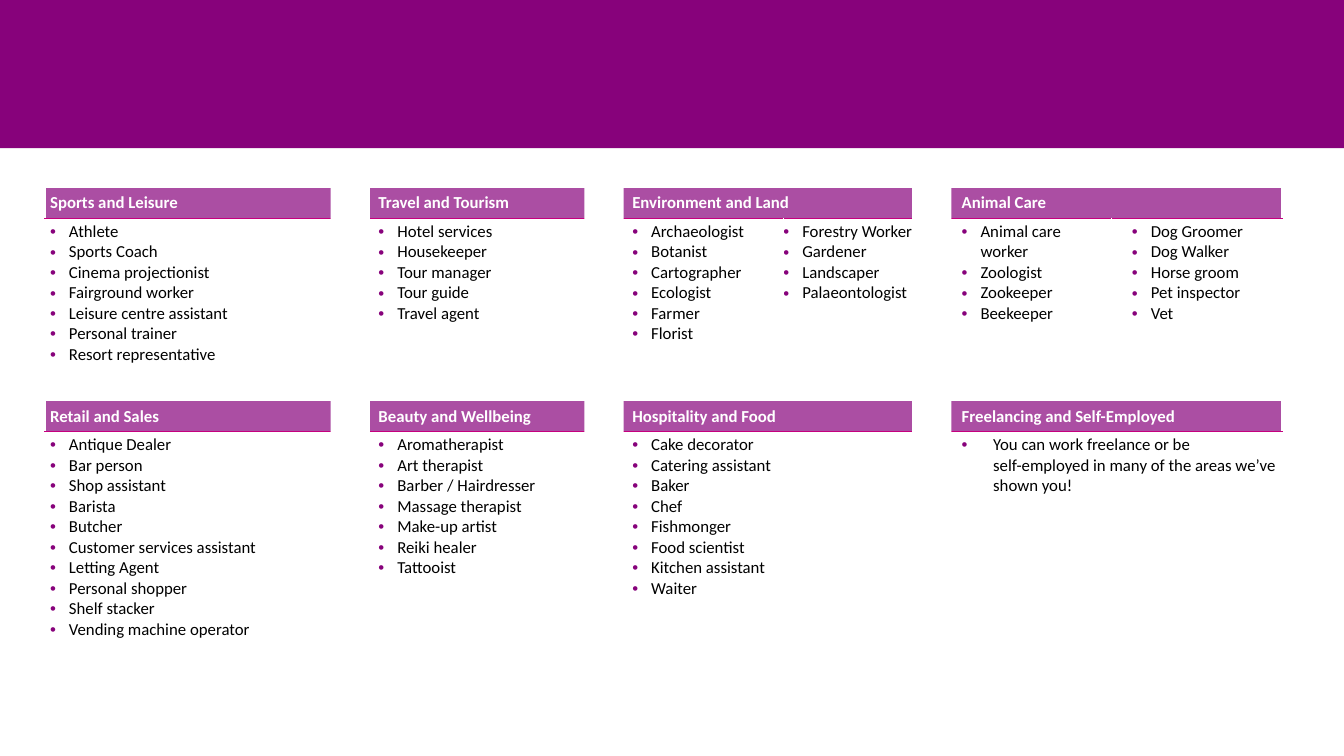
from lxml import etree
from pptx import Presentation
from pptx.dml.color import RGBColor
from pptx.enum.shapes import MSO_SHAPE
from pptx.oxml.ns import qn
from pptx.util import Pt

RECTANGLE = MSO_SHAPE.RECTANGLE

PURPLE = RGBColor(0x87, 0x02, 0x7B)
LILAC = RGBColor(0xAB, 0x4E, 0xA3)
PINK = RGBColor(0xC6, 0x00, 0x7E)
WHITE = RGBColor(0xFF, 0xFF, 0xFF)
BLACK = RGBColor(0x00, 0x00, 0x00)

SLIDE_WIDTH, SLIDE_HEIGHT = 960.48, 540
TABLE_LEFT, TABLE_TOP = 32.2, 134.2
COLUMN_WIDTHS = [238.3, 181.4, 108, 113, 121.7, 121.7]
COLUMN_INSETS = [3.6, 0, 0, 0, 14.4, 14.4]
OPEN_EDGES = (1, 2)  # columns without a white line on their left
ROW_HEIGHTS = [21.9, 130.4, 21.9, 149]
GAP_LEFTS = [236.2, 417.6, 651.9]
GAP_TOP, GAP_WIDTH, GAP_HEIGHT = 133, 28.1, 335.7
JOB_INDENT, ADVICE_INDENT = 13.5, 22.5

# Each sector: row, first column, heading, one list of jobs per column
SECTORS = [
    (0, 0, "Sports and Leisure", [
        ["Athlete", "Sports Coach", "Cinema projectionist", "Fairground worker",
         "Leisure centre assistant", "Personal trainer", "Resort representative"]]),
    (0, 1, "Travel and Tourism", [
        ["Hotel services", "Housekeeper", "Tour manager", "Tour guide", "Travel agent"]]),
    (0, 2, "Environment and Land", [
        ["Archaeologist", "Botanist", "Cartographer", "Ecologist", "Farmer", "Florist"],
        ["Forestry Worker", "Gardener", "Landscaper", "Palaeontologist"]]),
    (0, 4, "Animal Care", [
        ["Animal care worker", "Zoologist", "Zookeeper", "Beekeeper"],
        ["Dog Groomer", "Dog Walker", "Horse groom", "Pet inspector", "Vet"]]),
    (2, 0, "Retail and Sales", [
        ["Antique Dealer", "Bar person", "Shop assistant", "Barista", "Butcher",
         "Customer services assistant", "Letting Agent", "Personal shopper",
         "Shelf stacker", "Vending machine operator"]]),
    (2, 1, "Beauty and Wellbeing", [
        ["Aromatherapist", "Art therapist", "Barber / Hairdresser", "Massage therapist",
         "Make-up artist", "Reiki healer", "Tattooist"]]),
    (2, 2, "Hospitality and Food", [
        ["Cake decorator", "Catering assistant", "Baker", "Chef", "Fishmonger",
         "Food scientist", "Kitchen assistant", "Waiter"]]),
    (2, 4, "Freelancing and Self-Employed", [
        ["You can work freelance or be \nself-employed in many of the areas we’ve shown you!"]]),
]


class CareersSlide:
    font_name = "Calibri"
    font_size = 12

    def __init__(self, presentation):
        self.slide = presentation.slides.add_slide(presentation.slide_layouts[6])

    def rectangle(self, left, top, width, height, color):
        block = self.slide.shapes.add_shape(
            RECTANGLE, Pt(left), Pt(top), Pt(width), Pt(height))
        block.shadow.inherit = False
        block.fill.solid()
        block.fill.fore_color.rgb = color
        block.line.fill.background()

    def table(self, left, top, widths, heights):
        frame = self.slide.shapes.add_table(
            len(heights), len(widths), Pt(left), Pt(top), Pt(sum(widths)), Pt(sum(heights)))
        grid = frame.table
        grid.first_row = grid.horz_banding = False
        for column, width in zip(grid.columns, widths):
            column.width = Pt(width)
        for row, height in zip(grid.rows, heights):
            row.height = Pt(height)
        return grid

    def border(self, cell, side, color):
        properties = cell._tc.get_or_add_tcPr()
        edge = etree.SubElement(properties, qn(f"a:ln{side}"), w=str(Pt(1)))
        if color is None:
            etree.SubElement(edge, qn("a:noFill"))
        else:
            fill = etree.SubElement(edge, qn("a:solidFill"))
            etree.SubElement(fill, qn("a:srgbClr"), val=str(color))

    def style_cell(self, cell, column, heading):
        cell.margin_left, cell.margin_right = Pt(COLUMN_INSETS[column]), Pt(0)
        cell.margin_top, cell.margin_bottom = Pt(3.6 if heading else 2.2), Pt(3.6)
        self.border(cell, "L", None if column in OPEN_EDGES else WHITE)
        self.border(cell, "R", None if column + 1 in OPEN_EDGES else WHITE)
        self.border(cell, "T", None if heading else PINK)
        self.border(cell, "B", PINK if heading else None)
        cell.fill.solid()
        cell.fill.fore_color.rgb = LILAC if heading else WHITE

    def text(self, paragraph, words, color, bold=False):
        for number, line in enumerate(words.split("\n")):
            if number:
                paragraph.add_line_break()
            run = paragraph.add_run()
            run.text = line
            run.font.name = self.font_name
            run.font.size = Pt(self.font_size)
            run.font.bold = bold
            run.font.color.rgb = color

    def bullet(self, paragraph, indent):
        properties = paragraph._p.get_or_add_pPr()
        properties.set("marL", str(Pt(indent)))
        properties.set("indent", str(-Pt(indent)))
        color = etree.SubElement(properties, qn("a:buClr"))
        etree.SubElement(color, qn("a:srgbClr"), val=str(PURPLE))
        etree.SubElement(properties, qn("a:buFont"), typeface="Arial")
        etree.SubElement(properties, qn("a:buChar"), char="•")

    def bullet_list(self, cell, items):
        for number, item in enumerate(items):
            frame = cell.text_frame
            paragraph = frame.add_paragraph() if number else frame.paragraphs[0]
            self.bullet(paragraph, ADVICE_INDENT if "\n" in item else JOB_INDENT)
            self.text(paragraph, item, BLACK)


def main():
    presentation = Presentation()
    presentation.slide_width = Pt(SLIDE_WIDTH)
    presentation.slide_height = Pt(SLIDE_HEIGHT)
    careers = CareersSlide(presentation)

    # Title band
    careers.rectangle(0, 0, SLIDE_WIDTH, 105.8, PURPLE)

    # Sector table
    sectors = careers.table(TABLE_LEFT, TABLE_TOP, COLUMN_WIDTHS, ROW_HEIGHTS)
    for row in range(len(ROW_HEIGHTS)):
        for column in range(len(COLUMN_WIDTHS)):
            careers.style_cell(sectors.cell(row, column), column, heading=row % 2 == 0)
    for row in (0, 2, 3):
        for column in (2, 4):
            sectors.cell(row, column).merge(sectors.cell(row, column + 1))

    # Headings and jobs
    for row, column, heading, job_lists in SECTORS:
        title = sectors.cell(row, column).text_frame.paragraphs[0]
        careers.text(title, heading, WHITE, bold=True)
        for offset, jobs in enumerate(job_lists):
            careers.bullet_list(sectors.cell(row + 1, column + offset), jobs)

    # White gaps between the sectors
    for gap_left in GAP_LEFTS:
        careers.rectangle(gap_left, GAP_TOP, GAP_WIDTH, GAP_HEIGHT, WHITE)

    presentation.save("out.pptx")


if __name__ == "__main__":
    main()
